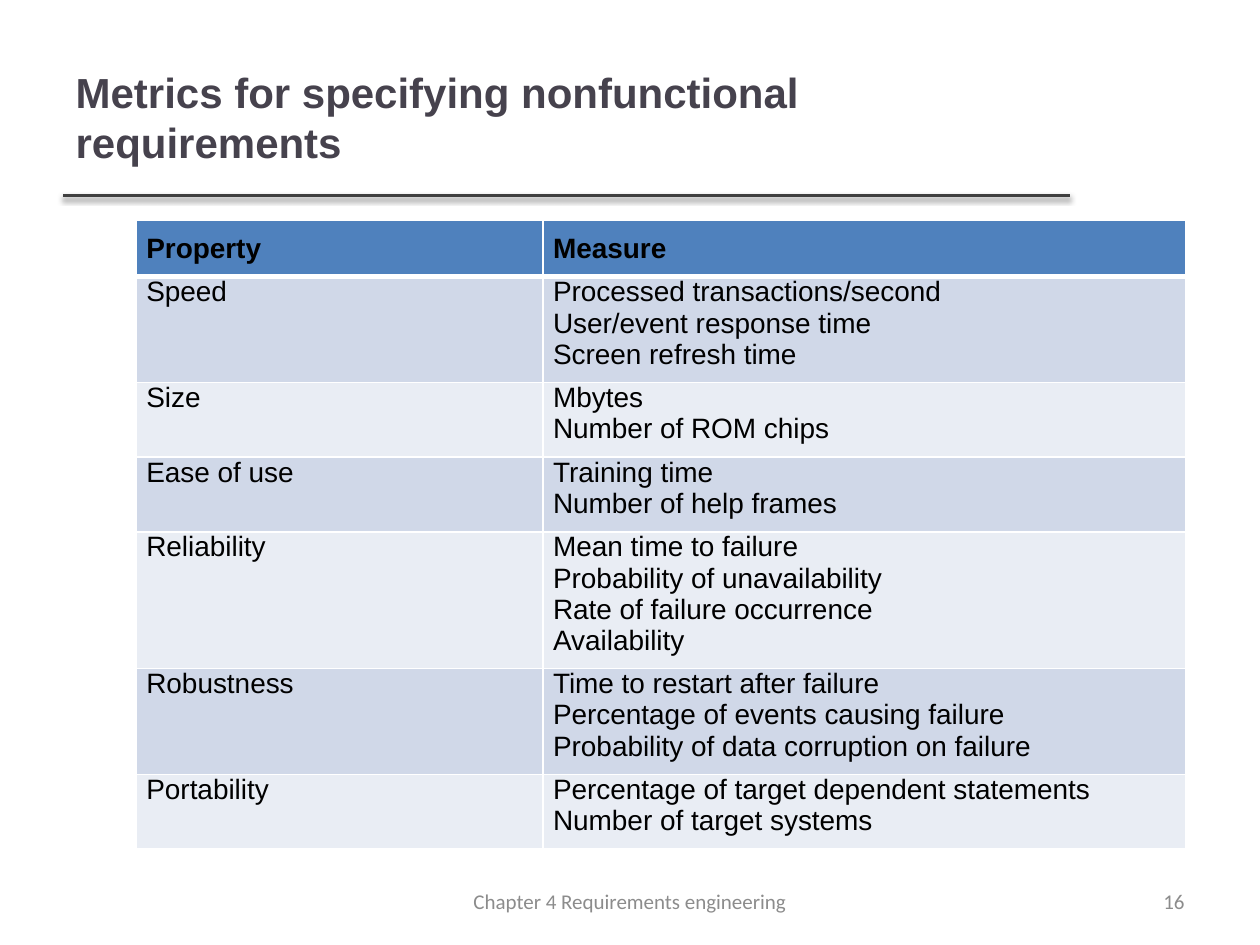
from dataclasses import dataclass

from lxml import etree
from pptx import Presentation
from pptx import util as u
from pptx.dml import color
from pptx.enum import shapes, text
from pptx.oxml import ns


@dataclass(frozen=True)
class Theme:
    title_color: str = "46424D"
    text_color: str = "000000"
    footer_color: str = "8C8C8C"
    rule_color: str = "404040"
    header_fill: str = "4F81BD"
    band_fills: tuple = ("E9EDF4", "D0D8E8")
    border_color: str = "FFFFFF"
    body_font: str = "Arial"
    footer_font: str = "Calibri"
    title_size: int = 24
    table_size: int = 16
    footer_size: int = 12


theme = Theme()


def add_run(paragraph, words, font, size, rgb, bold=False):
    run = paragraph.add_run()
    run.text = words
    run.font.name = font
    run.font.size = u.Pt(size)
    run.font.bold = bold
    run.font.color.rgb = color.RGBColor.from_string(rgb)


def add_border(cell, side, points):
    properties = cell._tc.get_or_add_tcPr()
    line = etree.SubElement(properties, ns.qn(f"a:ln{side}"), w=str(u.Pt(points)))
    fill = etree.SubElement(line, ns.qn("a:solidFill"))
    etree.SubElement(fill, ns.qn("a:srgbClr"), val=theme.border_color)


presentation = Presentation()
presentation.slide_width = u.Cm(25.4)
presentation.slide_height = u.Cm(19.05)
slide = presentation.slides.add_slide(presentation.slide_layouts[5])

# Rule under the title, with a soft shadow
rule = slide.shapes.add_connector(
    shapes.MSO_CONNECTOR.STRAIGHT, u.Cm(1.27), u.Cm(3.94), u.Cm(21.56), u.Cm(3.94))
rule.line.width = u.Pt(2)
rule.line.color.rgb = color.RGBColor.from_string(theme.rule_color)
effects = etree.SubElement(rule._element.spPr, ns.qn("a:effectLst"))
shadow = etree.SubElement(
    effects, ns.qn("a:outerShdw"), blurRad=str(u.Pt(3.1)), dist=str(u.Pt(1.6)),
    dir="5400000", rotWithShape="0")
shadow_color = etree.SubElement(shadow, ns.qn("a:srgbClr"), val="000000")
etree.SubElement(shadow_color, ns.qn("a:alpha"), val="38000")

# Title
title = slide.shapes.title
title.left, title.top = u.Cm(1.27), u.Cm(0.76)
title.width, title.height = u.Cm(20.27), u.Cm(3.18)
title.text_frame.word_wrap = True
title.text_frame.vertical_anchor = text.MSO_ANCHOR.MIDDLE
paragraph = title.text_frame.paragraphs[0]
paragraph.alignment = text.PP_ALIGN.LEFT
add_run(paragraph, "Metrics for specifying nonfunctional requirements",
        theme.body_font, theme.title_size, theme.title_color, bold=True)

# Metrics table: row height in cm, property, measures
metrics = [
    (1.09, "Property", ["Measure"]),
    (1.9, "Speed", ["Processed transactions/second", "User/event response time",
                    "Screen refresh time"]),
    (1.35, "Size", ["Mbytes", "Number of ROM chips"]),
    (1.35, "Ease of use", ["Training time", "Number of help frames"]),
    (2.44, "Reliability", ["Mean time to failure", "Probability of unavailability",
                           "Rate of failure occurrence", "Availability"]),
    (1.9, "Robustness", ["Time to restart after failure",
                         "Percentage of events causing failure",
                         "Probability of data corruption on failure"]),
    (1.35, "Portability", ["Percentage of target dependent statements",
                           "Number of target systems"]),
]
total_height = sum(height for height, _, _ in metrics)
table = slide.shapes.add_table(
    len(metrics), 2, u.Cm(2.75), u.Cm(4.45), u.Cm(21.16), u.Cm(total_height)).table
table.columns[0].width = u.Cm(8.2)
table.columns[1].width = u.Cm(12.96)

for row, (height, name, measures) in enumerate(metrics):
    table.rows[row].height = u.Cm(height)
    header = row == 0
    for column, lines in enumerate(([name], measures)):
        cell = table.cell(row, column)
        cell.margin_left = cell.margin_right = u.Cm(0.2)
        cell.margin_top = u.Cm(0.25 if header else 0)
        cell.margin_bottom = u.Cm(0.25)
        for side in "LRTB":
            heavy = (row, side) in ((0, "B"), (1, "T"))
            add_border(cell, side, 3 if heavy else 1)
        cell.fill.solid()
        cell.fill.fore_color.rgb = color.RGBColor.from_string(
            theme.header_fill if header else theme.band_fills[row % 2])
        frame = cell.text_frame
        for index, line in enumerate(lines):
            paragraph = frame.add_paragraph() if index else frame.paragraphs[0]
            paragraph.alignment = text.PP_ALIGN.JUSTIFY
            add_run(paragraph, line, theme.body_font, theme.table_size,
                    theme.text_color, bold=header)

# Page number and footer
for left, width, alignment, words in (
        (18.2, 5.93, text.PP_ALIGN.RIGHT, "16"),
        (8.68, 8.04, text.PP_ALIGN.CENTER, "Chapter 4 Requirements engineering")):
    box = slide.shapes.add_textbox(u.Cm(left), u.Cm(17.66), u.Cm(width), u.Cm(1.01))
    box.text_frame.word_wrap = True
    box.text_frame.vertical_anchor = text.MSO_ANCHOR.MIDDLE
    paragraph = box.text_frame.paragraphs[0]
    paragraph.alignment = alignment
    add_run(paragraph, words, theme.footer_font, theme.footer_size, theme.footer_color)

presentation.save("out.pptx")
